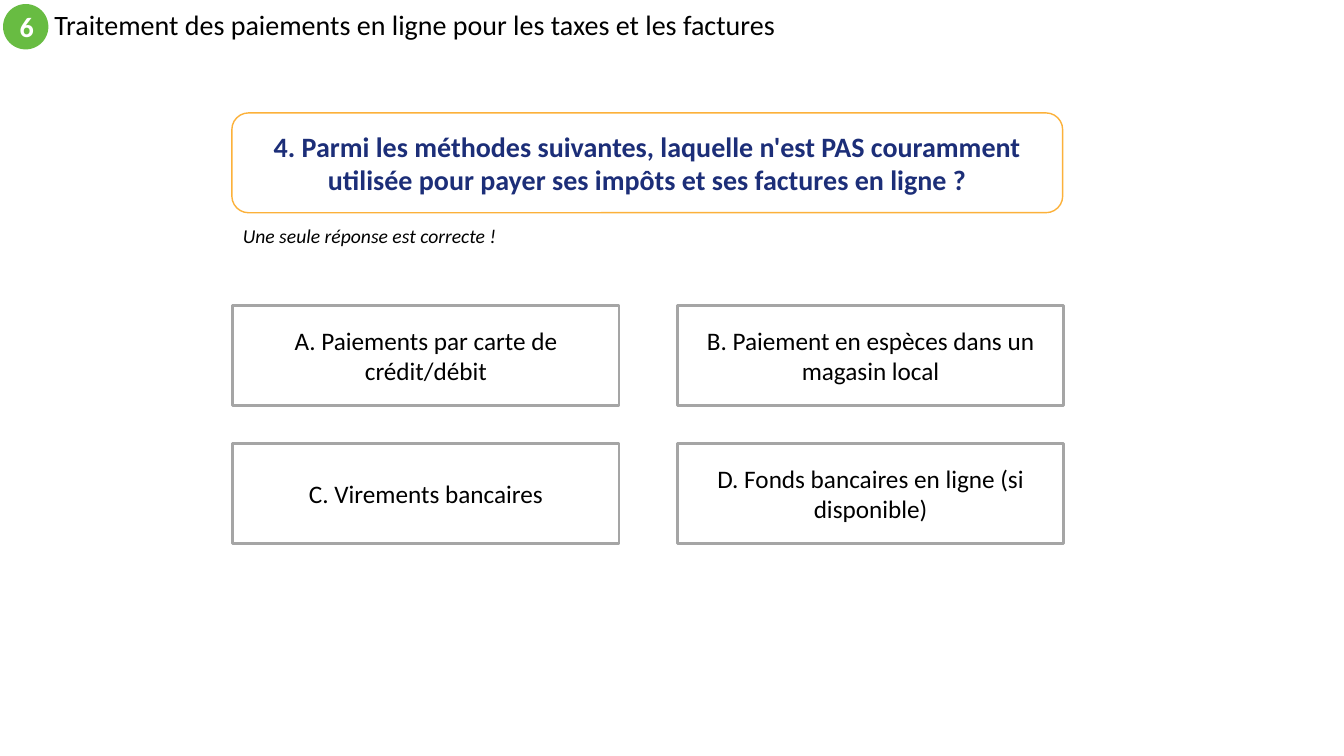
from pptx import Presentation
from pptx.dml.color import RGBColor
from pptx.enum.shapes import MSO_SHAPE as Shape
from pptx.enum.text import MSO_ANCHOR as Anchor, PP_ALIGN as Align
from pptx.util import Inches, Pt

COLORS = {
    "white": "FFFFFF",
    "black": "000000",
    "green": "68BC42",
    "orange": "FCB13A",
    "navy": "1C2E78",
    "gray": "A5A5A5",
}
FONT = "Calibri"
ANSWERS = [
    "A. Paiements par carte de crédit/débit",
    "B. Paiement en espèces dans un magasin local",
    "C. Virements bancaires",
    "D. Fonds bancaires en ligne (si disponible)",
]


def color(name):
    return RGBColor.from_string(COLORS[name])


def write(shape, text, size=18, ink="black", bold=False, italic=False,
          align=Align.CENTER, anchor=Anchor.MIDDLE, spacing=None):
    """Fill a shape with one formatted paragraph."""
    frame = shape.text_frame
    frame.word_wrap = True
    frame.vertical_anchor = anchor
    para = frame.paragraphs[0]
    para.alignment = align
    para.line_spacing = spacing
    span = para.add_run()
    span.text = text
    font = span.font
    font.name, font.size = FONT, Pt(size)
    font.bold, font.italic = bold, italic
    font.color.rgb = color(ink)


def add_box(page, kind, left, top, width, height, fill="white", line=None, weight=1):
    box = page.shapes.add_shape(
        kind, Inches(left), Inches(top), Inches(width), Inches(height))
    box.shadow.inherit = False
    box.fill.solid()
    box.fill.fore_color.rgb = color(fill)
    if line:
        box.line.color.rgb = color(line)
        box.line.width = Pt(weight)
    else:
        box.line.fill.background()
    return box


def add_text(page, left, top, width, height, text, **style):
    box = page.shapes.add_textbox(
        Inches(left), Inches(top), Inches(width), Inches(height))
    write(box, text, align=Align.LEFT, **style)


def add_header(page, left, top, height, number, title):
    badge = add_box(page, Shape.OVAL, left, top, height, height, fill="green")
    write(badge, number, size=20, ink="white", bold=True)
    add_text(page, left + 0.41, top, 8, height, title, size=20, spacing=0.9)


def add_question(page, left, top, width, height, question, hint):
    box = add_box(page, Shape.ROUNDED_RECTANGLE, left, top, width, height, line="orange")
    write(box, question, size=20, ink="navy", bold=True)
    add_text(page, left + 0.01, top + height + 0.06, 2.8, 0.34, hint,
             size=14, italic=True, anchor=Anchor.TOP)


def add_answers(page, left, top, width, height, answers, columns=2, gap_x=0.58, gap_y=0.38):
    """Lay the answers out row by row in a grid that fills the given box."""
    rows = len(answers) // columns
    cell_width = (width - gap_x * (columns - 1)) / columns
    cell_height = (height - gap_y * (rows - 1)) / rows
    for index, answer in enumerate(answers):
        row, column = divmod(index, columns)
        box = add_box(page, Shape.RECTANGLE,
                      left + column * (cell_width + gap_x),
                      top + row * (cell_height + gap_y),
                      cell_width, cell_height, line="gray", weight=2)
        write(box, answer)


def main():
    deck = Presentation()
    deck.slide_width, deck.slide_height = Inches(13.33), Inches(7.5)
    page = deck.slides.add_slide(deck.slide_layouts[6])
    add_header(page, 0.03, 0.04, 0.45, "6",
               "Traitement des paiements en ligne pour les taxes et les factures")
    add_question(page, 2.3, 1.12, 8.24, 0.99,
                 "4. Parmi les méthodes suivantes, laquelle n'est PAS couramment "
                 "utilisée pour payer ses impôts et ses factures en ligne ?",
                 "Une seule réponse est correcte !")
    add_answers(page, 2.31, 3.03, 8.24, 2.36, ANSWERS)
    deck.save("out.pptx")


if __name__ == "__main__":
    main()
